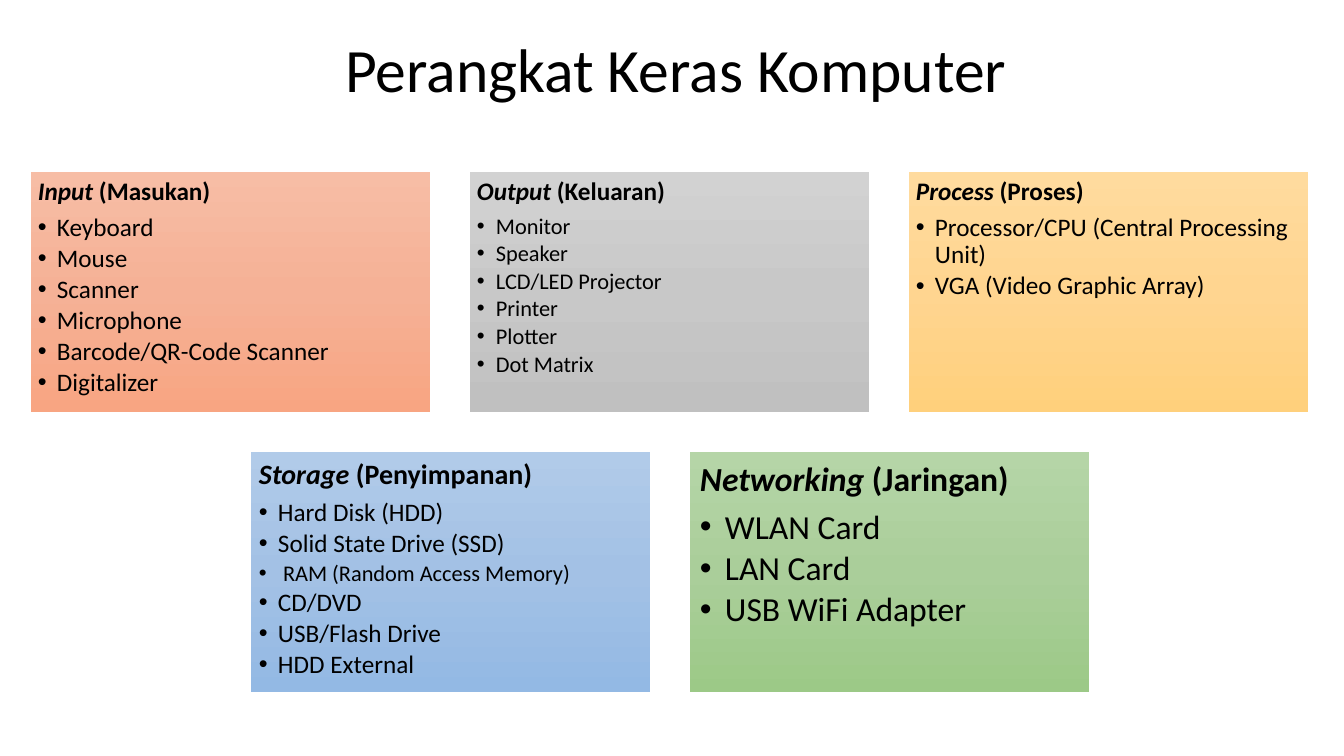
from copy import deepcopy

from lxml import etree
from pptx import Presentation
from pptx import util as u
from pptx.dml.color import RGBColor
from pptx.enum import shapes, text
from pptx.oxml.ns import qn

CENTRE, TOP, WIDTH, HEIGHT, GAP = 670, 172, 399, 240, 40
ROWS = [
    [
        dict(term="Input", meaning="Masukan", sizes=(18, 18), inset=7, indent=19,
             colours=("F7BDA5", "F5B196", "F8A582"),
             items=["Keyboard", "Mouse", "Scanner", "Microphone",
                    "Barcode/QR-Code Scanner", "Digitalizer"]),
        dict(term="Output", meaning="Keluaran", sizes=(18, 16), inset=7, indent=19,
             colours=("D2D2D2", "C8C8C8", "C0C0C0"),
             items=["Monitor", "Speaker", "LCD/LED Projector", "Printer",
                    "Plotter", "Dot Matrix"]),
        dict(term="Process", meaning="Proses", sizes=(18, 18), inset=7, indent=19,
             colours=("FFDB9E", "FFD590", "FFD07C"),
             items=["Processor/CPU (Central Processing Unit)",
                    "VGA (Video Graphic Array)"]),
    ],
    [
        dict(term="Storage", meaning="Penyimpanan", sizes=(20, 18), inset=8, indent=19,
             colours=("B1CBE9", "A3C1E5", "93B9E4"),
             items=["Hard Disk (HDD)", "Solid State Drive (SSD)",
                    " RAM (Random Access Memory)", "CD/DVD",
                    "USB/Flash Drive", "HDD External"],
             smaller={" RAM (Random Access Memory)": 16}),
        dict(term="Networking", meaning="Jaringan", sizes=(24, 24), inset=10, indent=25,
             colours=("B5D5A7", "AACE9A", "9CC987"),
             items=["WLAN Card", "LAN Card", "USB WiFi Adapter"]),
    ],
]


def px(length):
    return u.Emu(round(length * 914400 / 100.8))


def colour(code):
    return RGBColor.from_string(code)


class SlideBuilder:
    """Draws titles and bulleted cards in one style on the current slide."""

    font = "Calibri"
    ink = "000000"

    def __init__(self, deck):
        self.page = deck.slides.add_slide(deck.slide_layouts[5])

    def style(self, span, size, bold=False, italic=False):
        span.font.name = self.font
        span.font.size = u.Pt(size)
        span.font.bold = bold
        span.font.italic = italic
        span.font.color.rgb = colour(self.ink)

    def title(self, words, left, top, width, height, size):
        box = self.page.shapes.title
        box.left, box.top, box.width, box.height = map(px, (left, top, width, height))
        box.text_frame.text = words
        box.text_frame.vertical_anchor = text.MSO_ANCHOR.MIDDLE
        para = box.text_frame.paragraphs[0]
        para.alignment = text.PP_ALIGN.LEFT
        para.line_spacing = 0.9
        self.style(para.runs[0], size)

    def gradient(self, box, colours):
        box.fill.gradient()
        box.fill.gradient_angle = 270
        stops = box.element.find(".//" + qn("a:gsLst"))
        stops.insert(1, deepcopy(stops[0]))
        for stop, code, position in zip(box.fill.gradient_stops, colours, (0, 0.5, 1)):
            stop.color.rgb = colour(code)
            stop.position = position

    def spacing(self, para, percent):
        para.alignment = text.PP_ALIGN.LEFT
        para.line_spacing = 0.9
        after = etree.SubElement(para._p.get_or_add_pPr(), qn("a:spcAft"))
        etree.SubElement(after, qn("a:spcPct"), val=str(percent * 1000))

    def bullet(self, para, indent):
        props = para._p.get_or_add_pPr()
        props.set("marL", str(px(indent)))
        props.set("indent", str(-px(indent)))
        etree.SubElement(props, qn("a:buFont"), typeface="Arial")
        etree.SubElement(props, qn("a:buChar"), char="•")

    def card(self, left, top, term, meaning, sizes, inset, indent, colours, items,
             smaller={}):
        box = self.page.shapes.add_shape(
            shapes.MSO_SHAPE.RECTANGLE, *map(px, (left, top, WIDTH, HEIGHT)))
        box.shadow.inherit = False
        box.line.fill.background()
        self.gradient(box, colours)
        frame = box.text_frame
        frame.word_wrap = True
        frame.vertical_anchor = text.MSO_ANCHOR.TOP
        frame.margin_left = frame.margin_right = px(inset)
        frame.margin_top = frame.margin_bottom = px(inset)
        heading_size, item_size = sizes

        heading = frame.paragraphs[0]
        self.spacing(heading, 35)
        for words, italic in ((term, True), (f" ({meaning})", False)):
            span = heading.add_run()
            span.text = words
            self.style(span, heading_size, bold=True, italic=italic)

        for item in items:
            para = frame.add_paragraph()
            para.text = item
            para.level = 1
            self.spacing(para, 15)
            self.bullet(para, indent)
            self.style(para.runs[0], smaller.get(item, item_size))


def main():
    deck = Presentation()
    deck.slide_width, deck.slide_height = px(1344), px(756)
    slide = SlideBuilder(deck)
    slide.title("Perangkat Keras Komputer", 335, 0, 692, 146, 44)
    for row, cards in enumerate(ROWS):
        row_width = len(cards) * (WIDTH + GAP) - GAP
        start = CENTRE - (row_width + 1) // 2
        for column, card in enumerate(cards):
            slide.card(start + column * (WIDTH + GAP), TOP + row * (HEIGHT + GAP), **card)
    deck.save("out.pptx")


if __name__ == "__main__":
    main()
